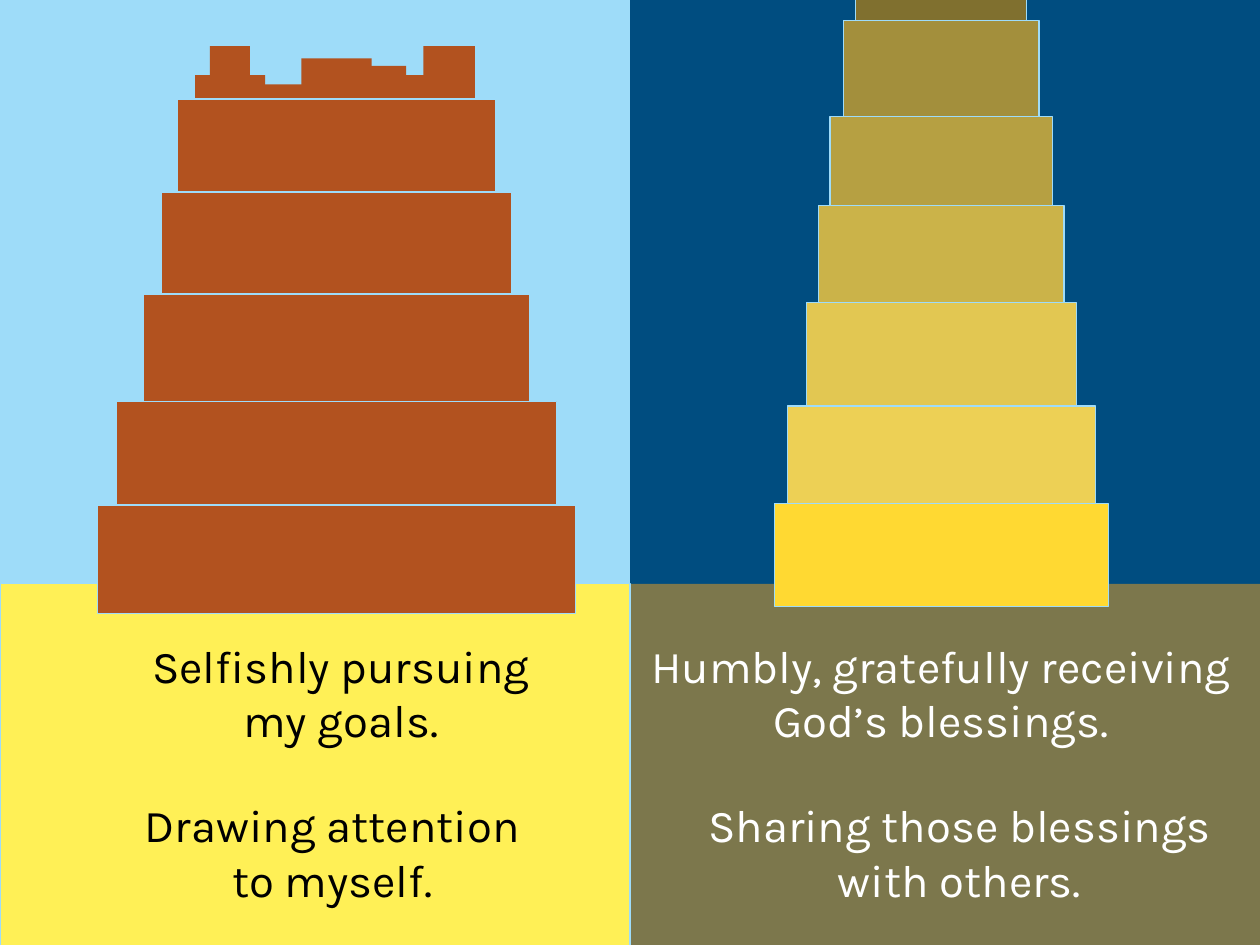
from pptx import Presentation, util as u
from pptx.dml.color import RGBColor
from pptx.enum import shapes, text

# Content: all lengths in points
WIDTH, HEIGHT = 1024, 768
HALF = WIDTH / 2
GROUND_TOP, GROUND_HEIGHT = 474.5, 295
SKY_BLUE, BRICK, OUTLINE = "9EDCF9", "B2521F", "9EDCFA"

# Tiers from top to bottom: top, width, fill
GOLD_TOWER = {
    "center": 765, "tier_height": 83.5,
    "tiers": [
        (-56, 139, "80702F"), (16.5, 159, "A38F3C"), (95, 181, "B6A042"),
        (167, 199.5, "CBB349"), (246, 219.5, "E2C752"),
        (330, 250.5, "EDD055"), (409.5, 271.5, "FFD932"),
    ],
}
BRICK_TOWER = {
    "center": 273.5, "tier_height": 88,
    "tiers": [
        (80.5, 258, BRICK), (156, 285, BRICK), (239, 314, BRICK),
        (326, 358, BRICK), (410.5, 388, BRICK),
    ],
}
# Unfinished top of the brick tower: left, top, width, height
BROKEN_BRICKS = [
    (158.5, 61, 57, 39), (210, 68.5, 57, 39), (245, 47.5, 57, 55.5),
    (170.5, 37.5, 32.5, 39), (297.5, 53.5, 32.5, 39),
    (326, 61, 32.5, 39), (344, 37.5, 42, 61),
]
# Captions: words, left, top, width, height, colour
CAPTIONS = [
    ("Selfishly pursuing my goals.", 103.5, 490.5, 347, 144, "000000"),
    ("Drawing attention to myself.", 96.5, 631.5, 347, 121.5, "000000"),
    ("Humbly, gratefully receiving God’s blessings.", 525, 502, 479.5, 121.5, "FFFFFF"),
    ("Sharing those blessings with others.", 540, 631.5, 479.5, 121.5, "FFFFFF"),
]


def colour(value):
    return RGBColor.from_string(value)


def add_block(slide, left, top, width, height, fill, outline=None):
    shape = slide.shapes.add_shape(
        shapes.MSO_SHAPE.RECTANGLE, u.Pt(left), u.Pt(top), u.Pt(width), u.Pt(height))
    shape.shadow.inherit = False
    shape.fill.solid()
    shape.fill.fore_color.rgb = colour(fill)
    if outline:
        shape.line.color.rgb = colour(outline)
        shape.line.width = u.Pt(1)
    else:
        shape.line.fill.background()


def add_tower(slide, center, tier_height, tiers):
    for top, width, fill in tiers:
        add_block(slide, center - width / 2, top, width, tier_height, fill, OUTLINE)


def add_caption(slide, words, left, top, width, height, *, color, size=37, font="Karla"):
    box = slide.shapes.add_textbox(u.Pt(left), u.Pt(top), u.Pt(width), u.Pt(height))
    frame = box.text_frame
    frame.word_wrap = True
    frame.vertical_anchor = text.MSO_ANCHOR.MIDDLE
    frame.margin_left = frame.margin_right = u.Pt(4)
    frame.margin_top = frame.margin_bottom = u.Pt(4)
    paragraph = frame.paragraphs[0]
    paragraph.alignment = text.PP_ALIGN.CENTER
    run = paragraph.add_run()
    run.text = words
    run.font.name = font
    run.font.size = u.Pt(size)
    run.font.color.rgb = colour(color)


def main():
    presentation = Presentation()
    presentation.slide_width, presentation.slide_height = u.Pt(WIDTH), u.Pt(HEIGHT)
    slide = presentation.slides.add_slide(presentation.slide_layouts[6])

    # Right half: night sky, ground and gold tower
    add_block(slide, HALF, 0, HALF, HEIGHT, "004D80")
    add_block(slide, HALF, GROUND_TOP, HALF, GROUND_HEIGHT, "7C774C")
    add_tower(slide, **GOLD_TOWER)

    # Left half: day sky, sand and brick tower
    add_block(slide, 0, 0, HALF, HEIGHT, SKY_BLUE)
    add_block(slide, 0, GROUND_TOP, HALF, GROUND_HEIGHT, "FFF056", OUTLINE)
    for brick in BROKEN_BRICKS:
        add_block(slide, *brick, BRICK)
    add_tower(slide, **BRICK_TOWER)

    # Captions under both towers
    for words, left, top, width, height, color in CAPTIONS:
        add_caption(slide, words, left, top, width, height, color=color)

    presentation.save("out.pptx")


if __name__ == "__main__":
    main()
